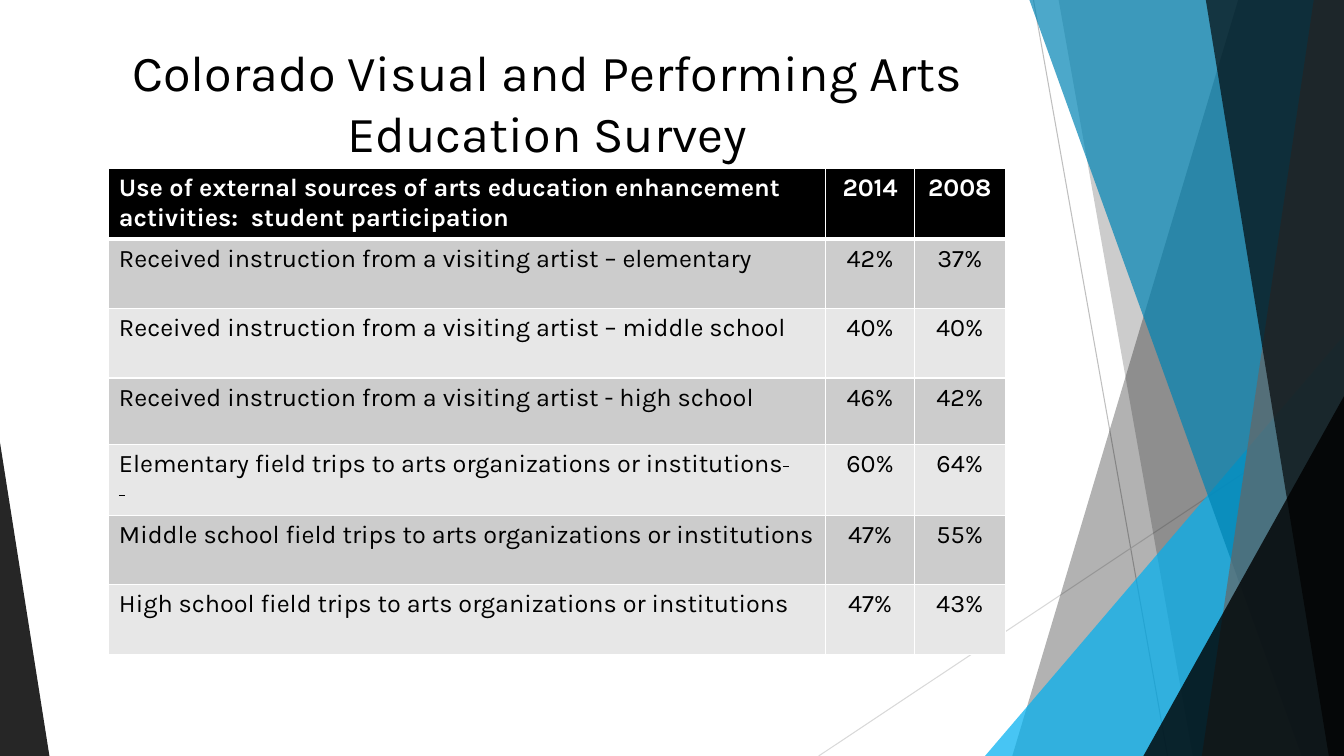
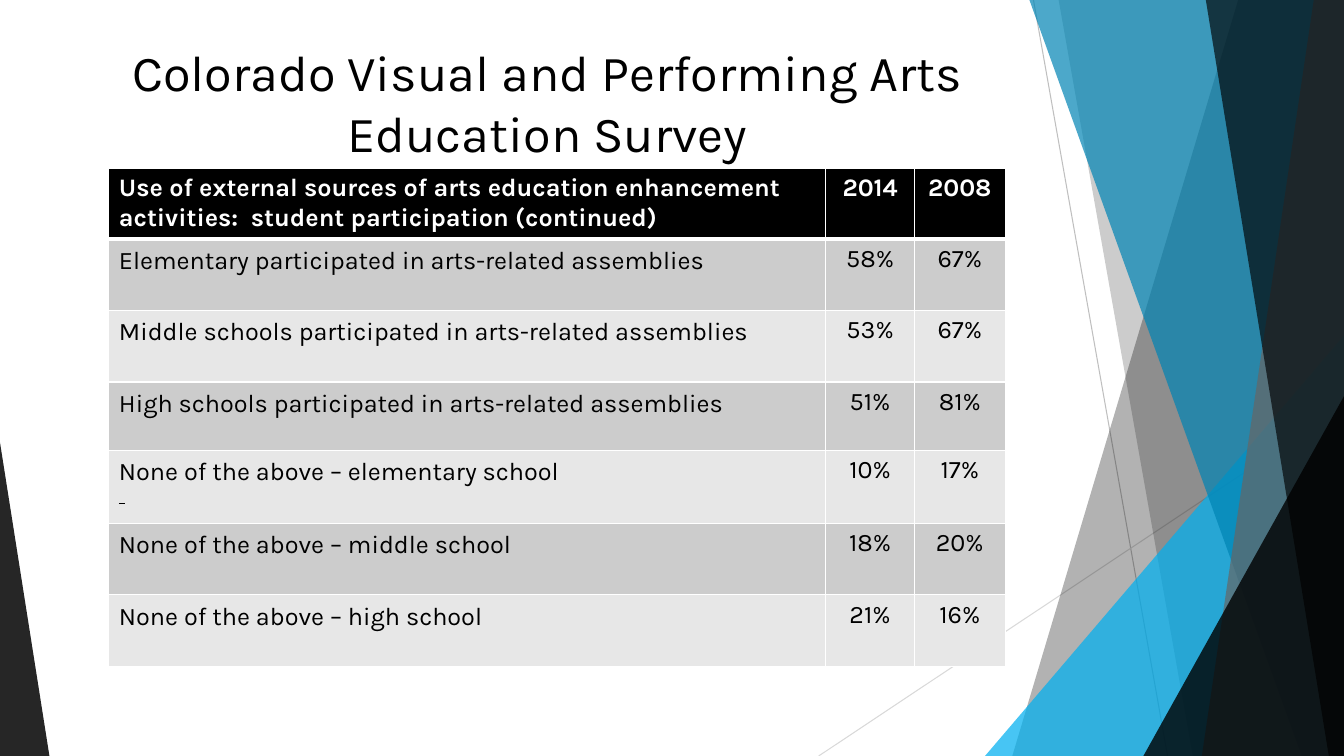
from collections import namedtuple
from dataclasses import dataclass

from pptx import Presentation
from pptx import util as u
from pptx.dml.color import RGBColor
from pptx.enum import shapes, text
from pptx.oxml import ns, xmlchemy
from lxml import etree

Box = namedtuple("Box", "left top width height")
Ribbon = namedtuple("Ribbon", "top_x bottom_x color opacity")
Wedge = namedtuple("Wedge", "box apex color opacity")
Row = namedtuple("Row", "label first second struck_space struck_line", defaults=(False, False))


@dataclass(frozen=True)
class Theme:
    font: str = "Karla"
    title_size: int = 36
    table_size: int = 18
    black: str = "000000"
    white: str = "FFFFFF"
    dark_band: str = "CCCCCC"
    light_band: str = "E7E7E7"
    sky: str = "00B0F0"
    blue: str = "0084B4"
    gray: str = "666666"
    steep_line: str = "BFBFBF"
    shallow_line: str = "D9D9D9"
    line_width: float = 0.75
    border: int = 1
    header_border: int = 3


THEME = Theme()
PAGE = Box(0, 0, 13.33, 7.5)
TITLE_BOX = Box(0.73, 0.29, 9.4, 1.44)
TITLE = "Colorado Visual and Performing Arts Education Survey"
TABLE_LEFT, TABLE_TOP = 1.08, 1.67
COLUMN_WIDTHS = (7.11, 0.88, 0.9)
HEADER_HEIGHT = 0.69
HEADER = "Use of external sources of arts education enhancement activities:  student participation"

LINES = (
    (10.25, 0, 11.58, 7.5, THEME.steep_line),
    (13.33, 4.03, 8.12, 7.5, THEME.shallow_line),
)
FACETS = (
    Ribbon(12.28, 10.04, THEME.black, 30),
    Ribbon(10.5, 11.83, THEME.black, 20),
    Wedge(Box(9.77, 3.33, 3.56, 4.17), 1, THEME.sky, 72),
    Ribbon(10.21, 12.91, THEME.blue, 70),
    Ribbon(13.03, 11.92, THEME.gray, 70),
    Ribbon(11.96, 13.18, THEME.black, 65),
    Wedge(Box(11.34, 3.93, 1.99, 3.57), 1, THEME.black, 80),
    Wedge(Box(0, 4.39, 0.49, 3.11), 0, THEME.black, 85),
)

VISITS_AND_TRIPS = (
    Row("Received instruction from a visiting artist – elementary", "42%", "37%"),
    Row("Received instruction from a visiting artist – middle school", "40%", "40%"),
    Row("Received instruction from a visiting artist - high school", "46%", "42%"),
    Row("Elementary field trips to arts organizations or institutions", "60%", "64%", True, True),
    Row("Middle school field trips to arts organizations or institutions", "47%", "55%"),
    Row("High school field trips to arts organizations or institutions", "47%", "43%"),
)
ASSEMBLIES = (
    Row("Elementary participated in arts-related assemblies", "58%", "67%"),
    Row("Middle schools participated in arts-related assemblies", "53%", "67%"),
    Row("High schools participated in arts-related assemblies", "51%", "81%"),
    Row("None of the above – elementary school", "10%", "17%", False, True),
    Row("None of the above – middle school", "18%", "20%"),
    Row("None of the above – high school", "21%", "16%"),
)


def rgb(color):
    return RGBColor.from_string(color)


def inches(*lengths):
    return [u.Inches(length) for length in lengths]


def style_font(font, size, color, bold=False):
    font.name = THEME.font
    font.size = u.Pt(size)
    font.bold = bold
    font.color.rgb = rgb(color)


def paint(shape, color, opacity):
    shape.shadow.inherit = False
    shape.line.fill.background()
    shape.fill.solid()
    shape.fill.fore_color.rgb = rgb(color)
    color_element = shape.fill._xPr.find(".//" + ns.qn("a:srgbClr"))
    etree.SubElement(color_element, ns.qn("a:alpha")).set("val", str(opacity * 1000))


def add_line(slide, box, start_x, start_y, end_x, end_y, color):
    line = slide.shapes.add_connector(
        shapes.MSO_CONNECTOR.STRAIGHT,
        *inches(box.left + start_x, box.top + start_y, box.left + end_x, box.top + end_y))
    line.line.color.rgb = rgb(color)
    line.line.width = u.Pt(THEME.line_width)
    etree.SubElement(line._element.spPr, ns.qn("a:effectLst"))


def add_ribbon(slide, box, ribbon):
    right, bottom = box.left + box.width, box.top + box.height
    builder = slide.shapes.build_freeform(*inches(box.left + ribbon.top_x, box.top))
    builder.add_line_segments([
        inches(right, box.top),
        inches(right, bottom),
        inches(box.left + ribbon.bottom_x, bottom),
    ])
    return builder.convert_to_shape()


def add_wedge(slide, box, wedge):
    left, top, width, height = wedge.box
    triangle = slide.shapes.add_shape(
        shapes.MSO_SHAPE.ISOSCELES_TRIANGLE,
        *inches(box.left + left, box.top + top, width, height))
    triangle.adjustments[0] = wedge.apex
    return triangle


def add_backdrop(slide, box):
    for line in LINES:
        add_line(slide, box, *line)
    for facet in FACETS:
        add_facet = add_ribbon if isinstance(facet, Ribbon) else add_wedge
        paint(add_facet(slide, box, facet), facet.color, facet.opacity)


def add_title(slide, box):
    frame = slide.shapes.add_textbox(*inches(*box)).text_frame
    frame.word_wrap = True
    frame.vertical_anchor = text.MSO_ANCHOR.MIDDLE
    paragraph = frame.paragraphs[0]
    paragraph.text = TITLE
    paragraph.alignment = text.PP_ALIGN.CENTER
    style_font(paragraph.font, THEME.title_size, THEME.black)


def set_borders(cell, row_index):
    properties = cell._tc.get_or_add_tcPr()
    heavy_side = {0: "lnB", 1: "lnT"}.get(row_index)
    for side in ("lnL", "lnR", "lnT", "lnB"):
        width = THEME.header_border if side == heavy_side else THEME.border
        border = etree.SubElement(properties, ns.qn("a:" + side), w=str(u.Pt(width)))
        fill = etree.SubElement(border, ns.qn("a:solidFill"))
        etree.SubElement(fill, ns.qn("a:srgbClr"), val=THEME.white)


def add_struck_space(paragraph):
    run = paragraph.add_run()
    run.text = " "
    style_font(run.font, THEME.table_size, THEME.black)
    run.font._element.set("strike", "sngStrike")


def fill_cell(cell, value, row_index, column_index):
    header = row_index == 0
    set_borders(cell, row_index)
    cell.fill.solid()
    band = THEME.dark_band if row_index % 2 else THEME.light_band
    cell.fill.fore_color.rgb = rgb(THEME.black if header else band)
    paragraph = cell.text_frame.paragraphs[0]
    paragraph.text = value
    if column_index:
        paragraph.alignment = text.PP_ALIGN.CENTER
    style_font(paragraph.font, THEME.table_size, THEME.white if header else THEME.black, header)


def add_survey_table(slide, left, top, heading, rows, row_height, label_spacing):
    rows = (Row(heading, "2014", "2008"),) + rows
    heights = [HEADER_HEIGHT] + [row_height] * (len(rows) - 1)
    heights[3] -= 0.03
    table = slide.shapes.add_table(
        len(rows), len(COLUMN_WIDTHS),
        *inches(left, top, sum(COLUMN_WIDTHS), sum(heights))).table
    table.horz_banding = False
    for column, width in zip(table.columns, COLUMN_WIDTHS):
        column.width = u.Inches(width)
    for row_index, (row, height) in enumerate(zip(rows, heights)):
        table.rows[row_index].height = u.Inches(height)
        for column_index, value in enumerate(row[:3]):
            fill_cell(table.cell(row_index, column_index), value, row_index, column_index)
        frame = table.cell(row_index, 0).text_frame
        if row_index:
            frame.paragraphs[0].line_spacing = label_spacing
        if row.struck_space:
            add_struck_space(frame.paragraphs[0])
        if row.struck_line:
            add_struck_space(frame.add_paragraph())


def add_survey_slide(presentation, heading, rows, row_height, label_spacing):
    slide = presentation.slides.add_slide(presentation.slide_layouts[6])
    add_backdrop(slide, PAGE)
    add_title(slide, TITLE_BOX)
    add_survey_table(slide, TABLE_LEFT, TABLE_TOP, heading, rows, row_height, label_spacing)


def main():
    presentation = Presentation()
    presentation.slide_width, presentation.slide_height = inches(PAGE.width, PAGE.height)
    add_survey_slide(presentation, HEADER, VISITS_AND_TRIPS, 0.69, 1.0)
    add_survey_slide(presentation, HEADER + " (continued)", ASSEMBLIES, 0.71, 1.07)
    presentation.save("out.pptx")


if __name__ == "__main__":
    main()
